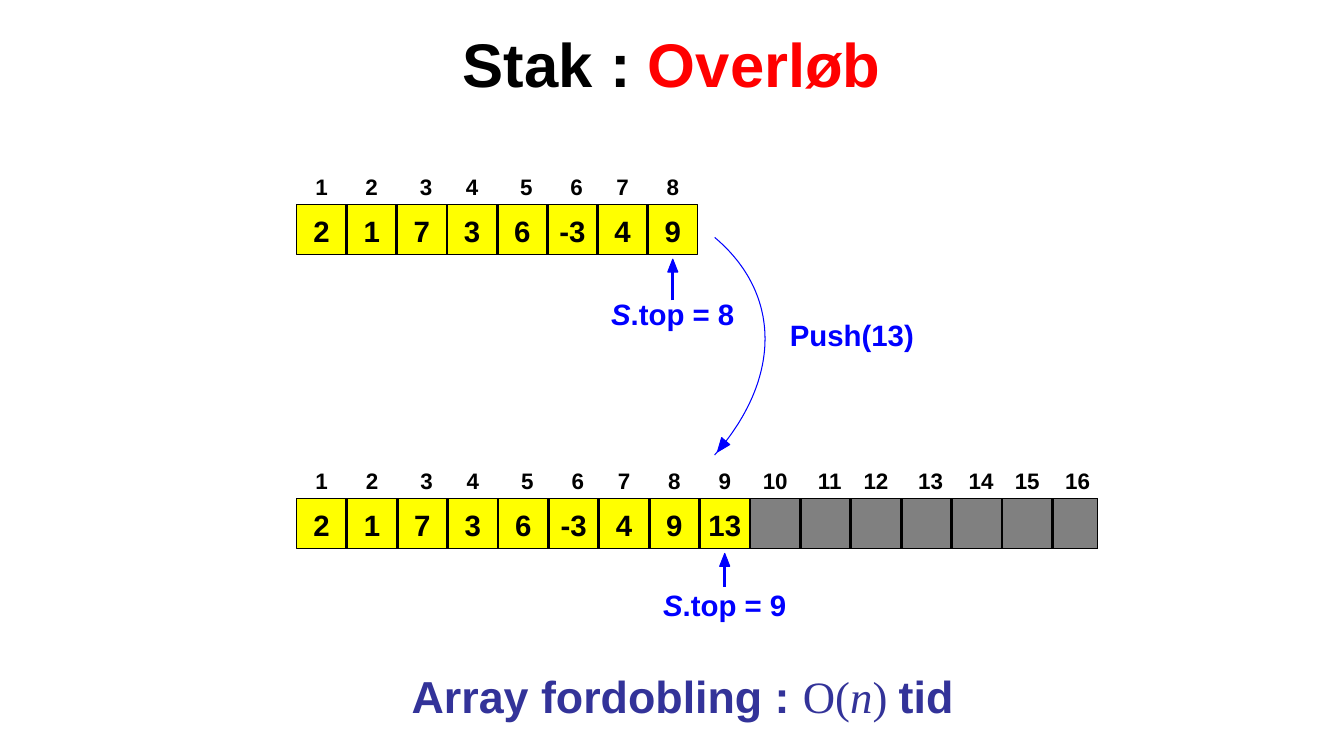
from dataclasses import dataclass

from lxml import etree
from pptx import Presentation
from pptx.dml.color import RGBColor
from pptx.enum import shapes, text
from pptx.oxml.ns import qn
from pptx.util import Pt


@dataclass(frozen=True)
class Theme:
    black = RGBColor(0, 0, 0)
    red = RGBColor(255, 0, 0)
    blue = RGBColor(0, 0, 255)
    indigo = RGBColor(0x33, 0x33, 0x99)
    used = RGBColor(255, 255, 0)
    free = RGBColor(128, 128, 128)
    font = "Arial"
    math_font = "Times New Roman"
    title = 44
    conclusion = 32
    body = 21
    index = 16
    hairline = Pt(0)


theme = Theme()
ROW_HEIGHT = 35.7


def style(p, size, color):
    p.alignment = text.PP_ALIGN.CENTER
    p.font.size = Pt(size)
    p.font.color.rgb = color
    p.font.bold = True
    p.font.name = theme.font


def add_run(p, words, italic=None):
    r = p.add_run()
    r.text = words
    r.font.italic = italic
    return r


def add_label(s, center, top, width, size, color, *runs):
    """One centred line; runs are (words, italic) pairs."""
    sp = s.shapes.add_textbox(Pt(center - width / 2), Pt(top), Pt(width), Pt(size * 1.2))
    tf = sp.text_frame
    tf.word_wrap = False
    tf.margin_left = tf.margin_right = tf.margin_top = tf.margin_bottom = 0
    p = tf.paragraphs[0]
    style(p, size, color)
    for words, italic in runs:
        add_run(p, words, italic)


def add_line(s, x, y1, y2, color):
    sp = s.shapes.add_connector(shapes.MSO_CONNECTOR.STRAIGHT, Pt(x), Pt(y1), Pt(x), Pt(y2))
    etree.SubElement(sp._element.spPr, qn("a:effectLst"))
    sp.line.color.rgb = color
    sp.line.width = theme.hairline


def add_outline(s, points, closed):
    """Blue outline through the points, filled if closed."""
    points = [(Pt(x), Pt(y)) for x, y in points]
    fb = s.shapes.build_freeform(*points[0])
    fb.add_line_segments(points[1:], close=closed)
    sp = fb.convert_to_shape()
    sp.shadow.inherit = False
    if closed:
        sp.fill.solid()
        sp.fill.fore_color.rgb = theme.blue
    else:
        sp.fill.background()
    sp.line.color.rgb = theme.blue
    sp.line.width = theme.hairline


def add_title(s, left, top, width, height):
    sp = s.shapes.title
    sp.left, sp.top, sp.width, sp.height = map(Pt, (left, top, width, height))
    tf = sp.text_frame
    tf.vertical_anchor = text.MSO_ANCHOR.MIDDLE
    p = tf.paragraphs[0]
    style(p, theme.title, theme.black)
    add_run(p, "Stak : ")
    add_run(p, "Overløb").font.color.rgb = theme.red


def add_block(s, left, top, width, color):
    sp = s.shapes.add_shape(shapes.MSO_SHAPE.RECTANGLE, Pt(left), Pt(top), Pt(width), Pt(ROW_HEIGHT))
    sp.shadow.inherit = False
    sp.fill.solid()
    sp.fill.fore_color.rgb = color
    sp.line.color.rgb = theme.black
    sp.line.width = theme.hairline


def add_array(s, left, top, width, pitch, values, size):
    """Row of cells with its index numbers above."""
    add_block(s, left, top, width, theme.used)
    used = len(values) * pitch
    if len(values) < size:
        add_block(s, left + used, top, width - used, theme.free)
    for i in range(size):
        x = left + i * pitch
        if i:
            add_line(s, x, top + ROW_HEIGHT, top, theme.black)
        # Some index numbers sit slightly right of the cell centre
        number = str(i + 1)
        nudge = 3 if (i + 1) % 8 in (3, 5, 6) else 0
        add_label(s, x + pitch / 2 + nudge, top - 22.3, 9 * len(number),
                  theme.index, theme.black, (number, False))
    for i, value in enumerate(values):
        add_label(s, left + (i + 0.5) * pitch, top + 6.2, 11.7 * len(value),
                  theme.body, theme.black, (value, False))


def add_top_pointer(s, center, bottom, tail, label, top_index):
    """Arrow up to the top cell; tail and label are distances below the row."""
    tip = bottom + 3.6
    add_line(s, center, bottom + tail, tip + 5.8, theme.blue)
    add_outline(s, [(center - 3.6, tip + 9.2), (center, tip), (center + 3.6, tip + 9.2)], True)
    add_label(s, center, bottom + label, 89, theme.body, theme.blue,
              ("S", True), (f".top = {top_index}", False))


def add_push(s, left, top, width, height):
    """Curved arrow between the rows, with the operation beside it."""
    control = left + width * 4 / 3
    bottom = top + height
    curve = [(left, top), (control, top + 0.26 * height),
             (control, top + 0.65 * height), (left, bottom)]

    def point(t):
        weights = ((1 - t) ** 3, 3 * t * (1 - t) ** 2, 3 * t * t * (1 - t), t ** 3)
        return tuple(sum(w * c[axis] for w, c in zip(weights, curve)) for axis in (0, 1))

    steps = 60
    add_outline(s, [point(n / steps) for n in range(steps + 1)], False)
    add_outline(s, [(left + 10.8, bottom - 7.4), (left + 2, bottom - 2.2),
                    (left + 5, bottom - 12.4)], True)
    add_label(s, left + 98, top + 56.8, 89, theme.body, theme.blue, ("Push(13)", False))


def add_conclusion(s, left, top, width, height):
    sp = s.placeholders[1]
    sp.left, sp.top, sp.width, sp.height = map(Pt, (left, top, width, height))
    tf = sp.text_frame
    tf.auto_size = text.MSO_AUTO_SIZE.NONE
    p = tf.paragraphs[0]
    style(p, theme.conclusion, theme.indigo)
    p.space_before = Pt(0)
    pPr = p._p.get_or_add_pPr()
    pPr.set("marL", "0")
    pPr.set("indent", "0")
    pPr.find(qn("a:spcBef")).addnext(etree.Element(qn("a:buNone")))
    add_run(p, "Array fordobling : ")
    for words, italic in (("O(", False), ("n", True), (") ", False)):
        r = add_run(p, words, italic)
        r.font.name = theme.math_font
        r.font.bold = False
    add_run(p, "tid ")


def add_overflow_slide(prs):
    s = prs.slides.add_slide(prs.slide_layouts[1])
    add_title(s, 156, -0.4, 648, 90)

    # Full array before the push
    left, values = 211.7, ["2", "1", "7", "3", "6", "-3", "4", "9"]
    add_array(s, left, 145.8, 286.8, 35.85, values, 8)
    add_top_pointer(s, left + 7.5 * 35.85, 181.5, 33, 30.2, 8)

    # Doubled array after the push
    add_push(s, 510.5, 169.6, 36, 155.4)
    add_array(s, left, 356, 572.4, 36, values + ["13"], 16)
    add_top_pointer(s, left + 8.5 * 36, 391.7, 27.4, 27.4, 9)

    add_conclusion(s, 198, 474, 588, 45)


def main():
    prs = Presentation()
    prs.slide_width, prs.slide_height = Pt(960), Pt(540)
    add_overflow_slide(prs)
    prs.save("out.pptx")


if __name__ == "__main__":
    main()
